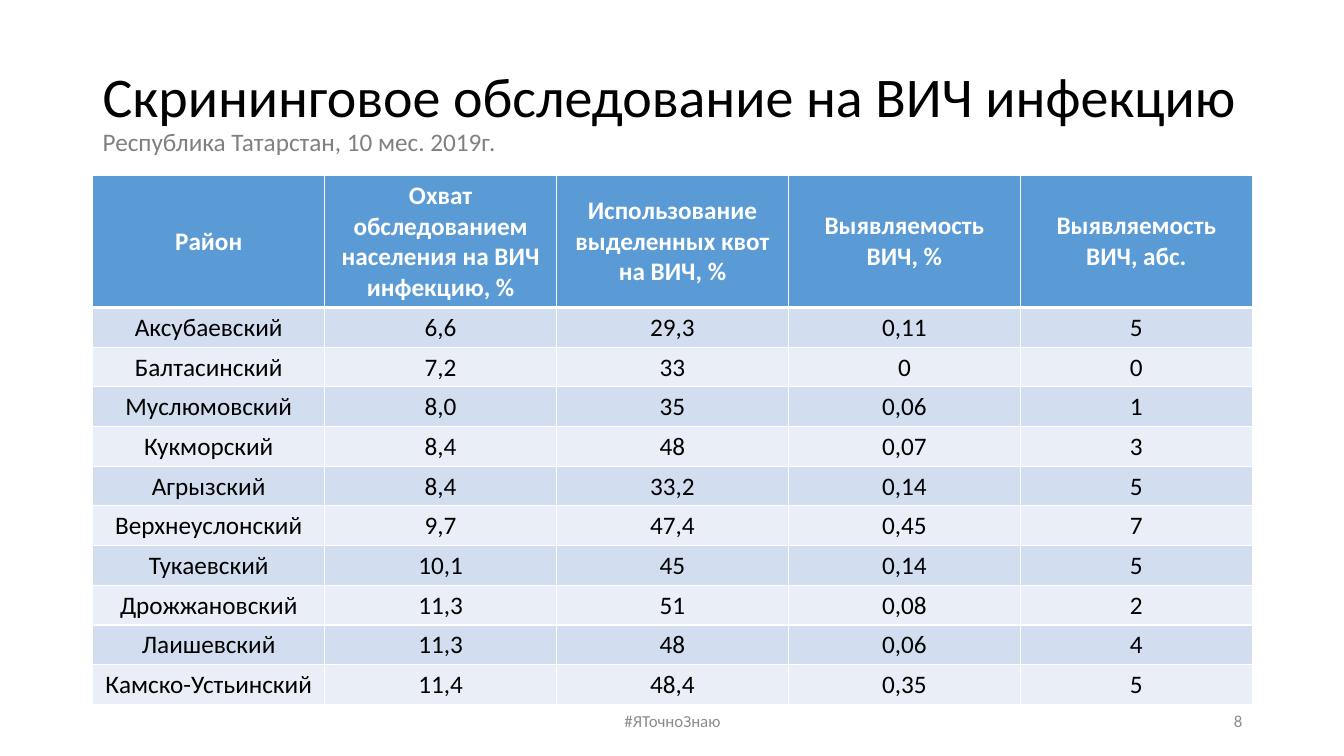
import dataclasses

import lxml.etree
import pptx
import pptx.dml.color
import pptx.enum.text
import pptx.oxml.ns
import pptx.util
from pptx.util import Inches

ALIGN = pptx.enum.text.PP_ALIGN
MIDDLE = pptx.enum.text.MSO_ANCHOR.MIDDLE


@dataclasses.dataclass(frozen=True)
class Theme:
    font: str = "Calibri"
    text: str = "000000"
    subtitle: str = "808080"
    footer: str = "8C8C8C"
    header_text: str = "FFFFFF"
    header_fill: str = "5B9BD5"
    band_fills: tuple = ("D2DEEF", "EAEFF7")
    border: str = "FFFFFF"
    title_size: int = 40
    body_size: int = 18
    footer_size: int = 12


theme = Theme()


def style_run(run, size, color, bold=False):
    run.font.name = theme.font
    run.font.size = pptx.util.Pt(size)
    run.font.bold = bold
    run.font.color.rgb = pptx.dml.color.RGBColor.from_string(color)


def set_borders(cell, top, bottom):
    """Draw solid cell borders; top and bottom widths are in points."""
    properties = cell._tc.get_or_add_tcPr()
    for tag, width in (("a:lnL", 1), ("a:lnR", 1), ("a:lnT", top), ("a:lnB", bottom)):
        line = lxml.etree.SubElement(
            properties, pptx.oxml.ns.qn(tag), w=str(pptx.util.Pt(width)))
        fill = lxml.etree.SubElement(line, pptx.oxml.ns.qn("a:solidFill"))
        lxml.etree.SubElement(fill, pptx.oxml.ns.qn("a:srgbClr"), val=theme.border)


presentation = pptx.Presentation()
presentation.slide_width = Inches(13.33)
presentation.slide_height = Inches(7.5)
slide = presentation.slides.add_slide(presentation.slide_layouts[6])

# Title with the region and period on its second line
title = slide.shapes.add_textbox(
    Inches(0.92), Inches(0.4), Inches(11.5), Inches(1.45)).text_frame
title.word_wrap = True
title.vertical_anchor = MIDDLE
heading = title.paragraphs[0]
heading.text = "Скрининговое обследование на ВИЧ инфекцию\vРеспублика Татарстан, 10 мес. 2019г."
heading.line_spacing = 0.9
style_run(heading.runs[0], theme.title_size, theme.text)
style_run(heading.runs[1], theme.body_size, theme.subtitle)

# Screening results by district
screening = [
    ("Район", "Охват обследованием населения на ВИЧ инфекцию, %",
     "Использование выделенных квот на ВИЧ, %", "Выявляемость ВИЧ, %",
     "Выявляемость ВИЧ, абс."),
    ("Аксубаевский", "6,6", "29,3", "0,11", "5"),
    ("Балтасинский", "7,2", "33", "0", "0"),
    ("Муслюмовский", "8,0", "35", "0,06", "1"),
    ("Кукморский", "8,4", "48", "0,07", "3"),
    ("Агрызский", "8,4", "33,2", "0,14", "5"),
    ("Верхнеуслонский", "9,7", "47,4", "0,45", "7"),
    ("Тукаевский", "10,1", "45", "0,14", "5"),
    ("Дрожжановский", "11,3", "51", "0,08", "2"),
    ("Лаишевский", "11,3", "48", "0,06", "4"),
    ("Камско-Устьинский", "11,4", "48,4", "0,35", "5"),
]
table_height = Inches(5.25)
header_height = Inches(1.31)
district_height = (table_height - header_height) // (len(screening) - 1)
districts = slide.shapes.add_table(
    len(screening), len(screening[0]),
    Inches(0.92), Inches(1.74), Inches(11.5), table_height).table

for row, values in enumerate(screening):
    is_header = row == 0
    districts.rows[row].height = header_height if is_header else district_height
    fill = theme.header_fill if is_header else theme.band_fills[(row - 1) % 2]
    for column, value in enumerate(values):
        cell = districts.cell(row, column)
        cell.text_frame.text = value
        cell.vertical_anchor = MIDDLE
        if not is_header:
            cell.margin_left = cell.margin_right = cell.margin_top = Inches(0.01)
            cell.margin_bottom = 0
        set_borders(cell, top=3 if row == 1 else 1, bottom=3 if is_header else 1)
        cell.fill.solid()
        cell.fill.fore_color.rgb = pptx.dml.color.RGBColor.from_string(fill)
        paragraph = cell.text_frame.paragraphs[0]
        paragraph.alignment = ALIGN.CENTER
        style_run(paragraph.runs[0], theme.body_size,
                  theme.header_text if is_header else theme.text, bold=is_header)

# Hashtag and slide number
for words, left, width, alignment in (
        ("#ЯТочноЗнаю", 4.42, 4.5, ALIGN.CENTER),
        ("8", 9.42, 3, ALIGN.RIGHT)):
    footer = slide.shapes.add_textbox(
        Inches(left), Inches(6.95), Inches(width), Inches(0.4)).text_frame
    footer.word_wrap = True
    footer.vertical_anchor = MIDDLE
    footer.text = words
    footer.paragraphs[0].alignment = alignment
    style_run(footer.paragraphs[0].runs[0], theme.footer_size, theme.footer)

presentation.save("out.pptx")
